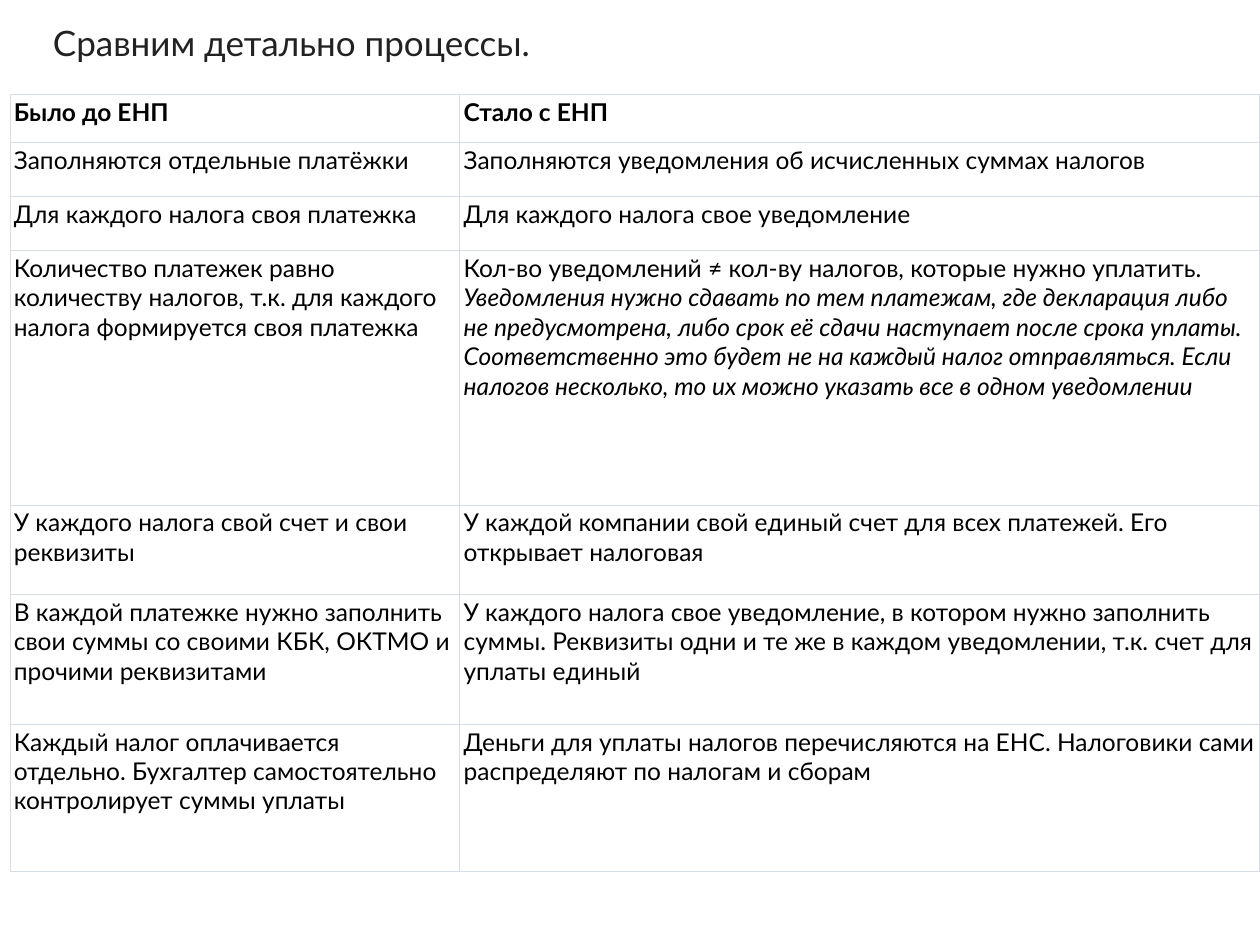
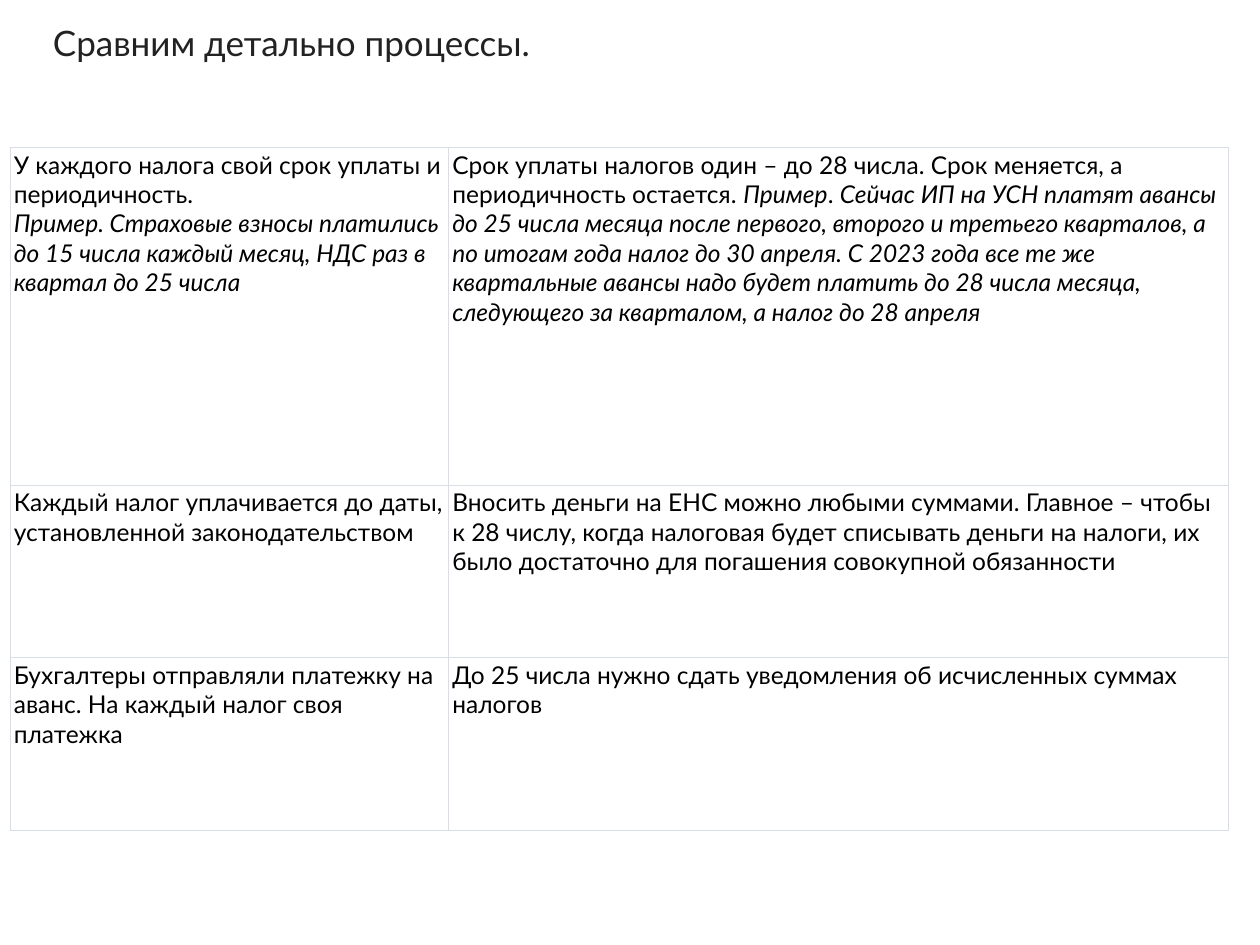
from lxml.etree import SubElement
from pptx import Presentation
from pptx.dml.color import RGBColor
from pptx.enum.text import MSO_ANCHOR as Anchor, MSO_AUTO_SIZE as AutoSize, PP_ALIGN as Align
from pptx.oxml.ns import qn
from pptx.util import Inches, Pt

FONT = "Lato"
WHITE = "FFFFFF"
BLACK = "000000"
TITLE_COLOR = "222222"
BORDER_COLOR = "D8DEE7"
BORDER_WIDTH = Pt(0.75)
TABLE_LEFT = 0.08
ITALIC_MARK = "*"

TITLE = "Сравним детально процессы."
TITLE_BOX = {"left": Inches(0.42), "top": Inches(0.17), "width": Inches(7.67), "height": Inches(0.88)}
TITLE_FRAME = {
    "margin_left": 0, "margin_right": 0, "margin_top": 0, "margin_bottom": 0,
    "word_wrap": True, "auto_size": AutoSize.NONE, "vertical_anchor": Anchor.TOP,
}
CELL_FORMAT = {
    "margin_left": Inches(0.03), "margin_right": Inches(0.03),
    "margin_top": Inches(0.02), "margin_bottom": Inches(0.02),
    "vertical_anchor": Anchor.TOP,
}
PLAIN_TABLE = {"first_row": False, "horz_banding": False}

PROCESS_ROWS = [
    ("Было до ЕНП", "Стало с ЕНП"),
    ("Заполняются отдельные платёжки",
     "Заполняются уведомления об исчисленных суммах налогов"),
    ("Для каждого налога своя платежка", "Для каждого налога свое уведомление"),
    ("Количество платежек равно количеству налогов, т.к. для каждого налога "
     "формируется своя платежка",
     "Кол-во уведомлений ≠ кол-ву налогов, которые нужно уплатить. \n"
     "*Уведомления нужно сдавать по тем платежам, где декларация либо не предусмотрена, "
     "либо срок её сдачи наступает после срока уплаты. Соответственно это будет не на "
     "каждый налог отправляться. Если налогов несколько, то их можно указать все в одном "
     "уведомлении*"),
    ("У каждого налога свой счет и свои реквизиты",
     "У каждой компании свой единый счет для всех платежей. Его открывает налоговая"),
    ("В каждой платежке нужно заполнить свои суммы со своими КБК, "
     "ОКТМО и прочими реквизитами",
     "У каждого налога свое уведомление, в котором нужно заполнить суммы. Реквизиты одни "
     "и те же в каждом уведомлении, т.к. счет для уплаты единый"),
    ("Каждый налог оплачивается отдельно. Бухгалтер самостоятельно контролирует суммы уплаты",
     "Деньги для уплаты налогов перечисляются на ЕНС. Налоговики сами распределяют "
     "по налогам и сборам"),
]

DEADLINE_ROWS = [
    ("У каждого налога свой срок уплаты и периодичность.\n"
     "*Пример. Страховые взносы платились до 15 числа каждый месяц, НДС раз в квартал "
     "до 25 числа*",
     "Срок уплаты налогов один – до 28 числа. Срок меняется, "
     "а периодичность остается. *Пример*. *Сейчас ИП на УСН платят авансы "
     "до 25 числа месяца после первого, второго и третьего кварталов, "
     "а по итогам года налог до 30 апреля. С 2023 года все "
     "те же квартальные авансы надо будет платить до 28 числа месяца, "
     "следующего за кварталом, а налог до 28 апреля*"),
    ("Каждый налог уплачивается до даты, установленной законодательством",
     "Вносить деньги на ЕНС можно любыми суммами. Главное – чтобы к 28 числу, когда "
     "налоговая будет списывать деньги на налоги, их было достаточно для погашения "
     "совокупной обязанности"),
    ("Бухгалтеры отправляли платежку на аванс. На каждый налог своя платежка",
     "До 25 числа нужно сдать уведомления об исчисленных суммах налогов"),
]


def color(hex_value):
    return RGBColor.from_string(hex_value)


def apply_format(target, values):
    for name, value in values.items():
        setattr(target, name, value)


def add_run(paragraph, text, size, hex_value, bold=False, italic=False):
    run = paragraph.add_run()
    run.text = text
    apply_format(run.font, {"name": FONT, "size": Pt(size), "bold": bold, "italic": italic})
    run.font.color.rgb = color(hex_value)


def add_title(slide):
    title = slide.shapes.title
    apply_format(title, TITLE_BOX)
    apply_format(title.text_frame, TITLE_FRAME)
    title.fill.solid()
    title.fill.fore_color.rgb = color(WHITE)
    paragraph = title.text_frame.paragraphs[0]
    paragraph.alignment = Align.LEFT
    add_run(paragraph, TITLE, 20, TITLE_COLOR)


def add_borders(cell):
    properties = cell._tc.get_or_add_tcPr()
    for side in ("a:lnL", "a:lnR", "a:lnT", "a:lnB"):
        line = SubElement(properties, qn(side), w=str(BORDER_WIDTH))
        fill = SubElement(line, qn("a:solidFill"))
        SubElement(fill, qn("a:srgbClr"), val=BORDER_COLOR)


def fill_cell(cell, text, bold):
    apply_format(cell, CELL_FORMAT)
    add_borders(cell)
    cell.fill.background()
    frame = cell.text_frame
    for line_index, line in enumerate(text.split("\n")):
        paragraph = frame.add_paragraph() if line_index else frame.paragraphs[0]
        for part_index, part in enumerate(line.split(ITALIC_MARK)):
            if part:
                add_run(paragraph, part, 14, BLACK, bold, italic=part_index % 2 == 1)


def add_comparison_table(slide, top, column_widths, row_heights, rows, has_header=False):
    table = slide.shapes.add_table(
        len(rows), len(column_widths), Inches(TABLE_LEFT), Inches(top),
        Inches(sum(column_widths)), Inches(sum(row_heights)),
    ).table
    apply_format(table, PLAIN_TABLE)
    for column, width in zip(table.columns, column_widths):
        column.width = Inches(width)
    for row_index, (row, height, texts) in enumerate(zip(table.rows, row_heights, rows)):
        row.height = Inches(height)
        for cell, text in zip(row.cells, texts):
            fill_cell(cell, text, bold=has_header and row_index == 0)


def add_comparison_slide(presentation, **table_values):
    slide = presentation.slides.add_slide(presentation.slide_layouts[5])
    add_title(slide)
    add_comparison_table(slide, **table_values)


def main():
    presentation = Presentation()
    apply_format(presentation, {"slide_width": Inches(10), "slide_height": Inches(7.5)})
    add_comparison_slide(
        presentation, top=0.75, column_widths=[3.57, 6.35],
        row_heights=[0.38, 0.43, 0.43, 2.02, 0.71, 1.03, 1.17],
        rows=PROCESS_ROWS, has_header=True,
    )
    add_comparison_slide(
        presentation, top=1.17, column_widths=[3.48, 6.19],
        row_heights=[2.68, 1.37, 1.37], rows=DEADLINE_ROWS,
    )
    presentation.save("out.pptx")


if __name__ == "__main__":
    main()
